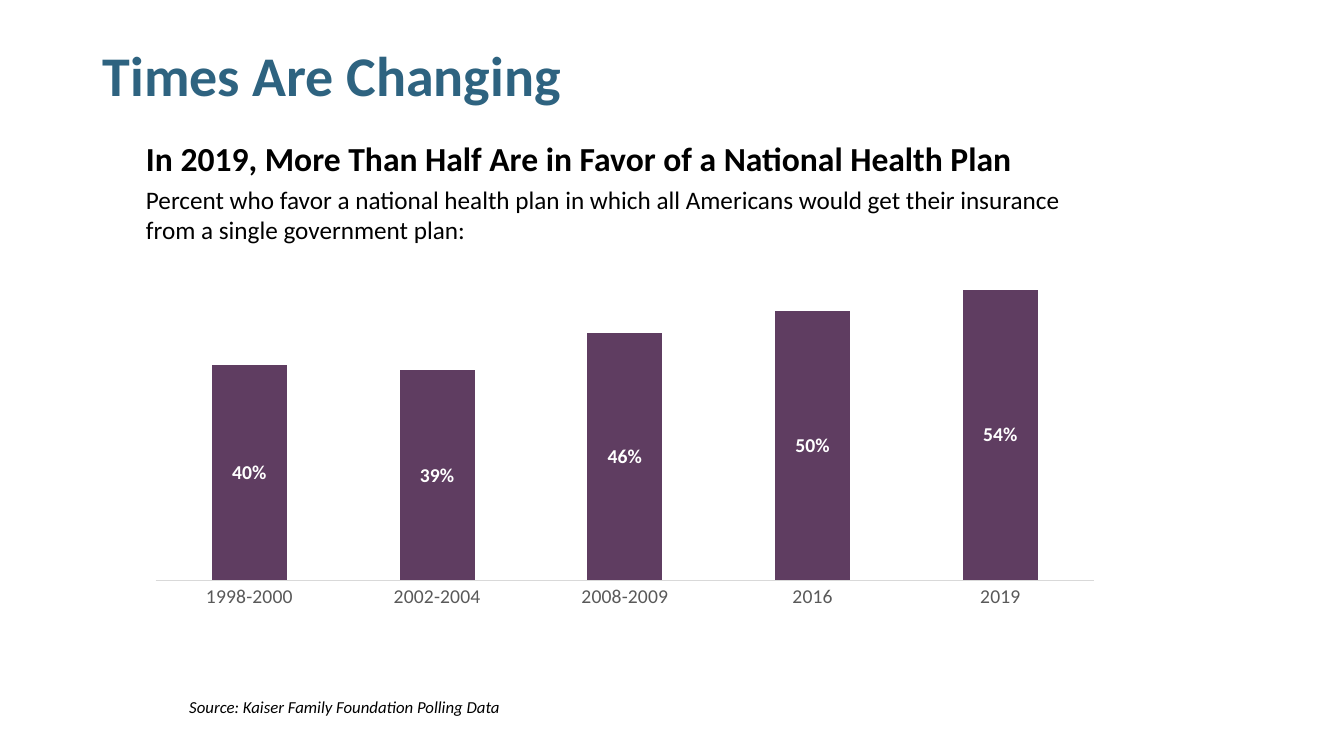
from pptx import Presentation
from pptx.chart.data import CategoryChartData
from pptx.dml.color import RGBColor
from pptx.enum.chart import XL_CHART_TYPE, XL_LABEL_POSITION, XL_TICK_MARK
from pptx.enum.text import MSO_ANCHOR
from pptx.util import Cm, Pt

FONT = "Calibri"
FAVOR_BY_PERIOD = {
    "1998-2000": 0.40,
    "2002-2004": 0.39,
    "2008-2009": 0.46,
    "2016": 0.50,
    "2019": 0.54,
}


def color(hex_string):
    return RGBColor.from_string(hex_string)


def style_font(font, size, hex_color, bold=False, italic=False):
    font.name = FONT
    font.size = Pt(size)
    font.bold = bold
    font.italic = italic
    font.color.rgb = color(hex_color)


def add_text(page, text, left, top, width, height, size=18, hex_color="000000",
             bold=False, italic=False, anchor=MSO_ANCHOR.TOP, line_spacing=1.0):
    """Place a text box in centimetres; a newline becomes a line break."""
    box = page.shapes.add_textbox(Cm(left), Cm(top), Cm(width), Cm(height))
    frame = box.text_frame
    frame.word_wrap = True
    frame.vertical_anchor = anchor
    para = frame.paragraphs[0]
    para.line_spacing = line_spacing
    for index, line in enumerate(text.split("\n")):
        if index:
            para.add_line_break()
        span = para.add_run()
        span.text = line
        style_font(span.font, size, hex_color, bold, italic)


def add_column_chart(page, values, left, top, width, height, fill):
    data = CategoryChartData(number_format="0%")
    data.categories = list(values)
    data.add_series("Series 1", list(values.values()))
    chart = page.shapes.add_chart(
        XL_CHART_TYPE.COLUMN_STACKED,
        Cm(left), Cm(top), Cm(width), Cm(height), data).chart
    chart.has_legend = False
    chart.has_title = False
    style_font(chart.font, 10, "000000")

    # Axes
    periods = chart.category_axis
    periods.major_tick_mark = XL_TICK_MARK.NONE
    periods.format.line.color.rgb = color("D9D9D9")
    periods.format.line.width = Pt(0.75)
    style_font(periods.tick_labels.font, 14, "595959")
    shares = chart.value_axis
    shares.minimum_scale = 0
    shares.maximum_scale = 0.6
    shares.has_major_gridlines = False
    shares.visible = False

    # Columns and their labels
    plot = chart.plots[0]
    plot.gap_width = 150
    plot.overlap = 100
    plot.vary_by_categories = False
    series = plot.series[0]
    series.format.fill.solid()
    series.format.fill.fore_color.rgb = color(fill)
    labels = series.data_labels
    labels.show_value = True
    labels.number_format = "0%"
    labels.number_format_is_linked = False
    labels.position = XL_LABEL_POSITION.CENTER
    style_font(labels.font, 14, "FFFFFF", bold=True)


def main():
    deck = Presentation()
    deck.slide_width = Cm(33.87)
    deck.slide_height = Cm(19.05)
    page = deck.slides.add_slide(deck.slide_layouts[6])

    # Headings
    add_text(page, "Times Are Changing", 2.34, 1.02, 29.2, 1.9, size=40,
             hex_color="2E6380", bold=True, anchor=MSO_ANCHOR.MIDDLE, line_spacing=0.9)
    add_text(page, "In 2019, More Than Half Are in Favor of a National Health Plan",
             3.43, 3.35, 27.03, 2.06, size=24, bold=True)
    add_text(page, "Percent who favor a national health plan in which all Americans "
             "would get their insurance \nfrom a single government plan:",
             3.43, 4.52, 25.9, 1.8)

    # Poll results
    add_column_chart(page, FAVOR_BY_PERIOD, 3.43, 6.3, 24.64, 9.22, fill="5F3D61")

    # Source line
    add_text(page, "Source: Kaiser Family Foundation Polling Data",
             4.52, 17.42, 28, 0.76, size=12, italic=True)

    deck.save("out.pptx")


if __name__ == "__main__":
    main()
